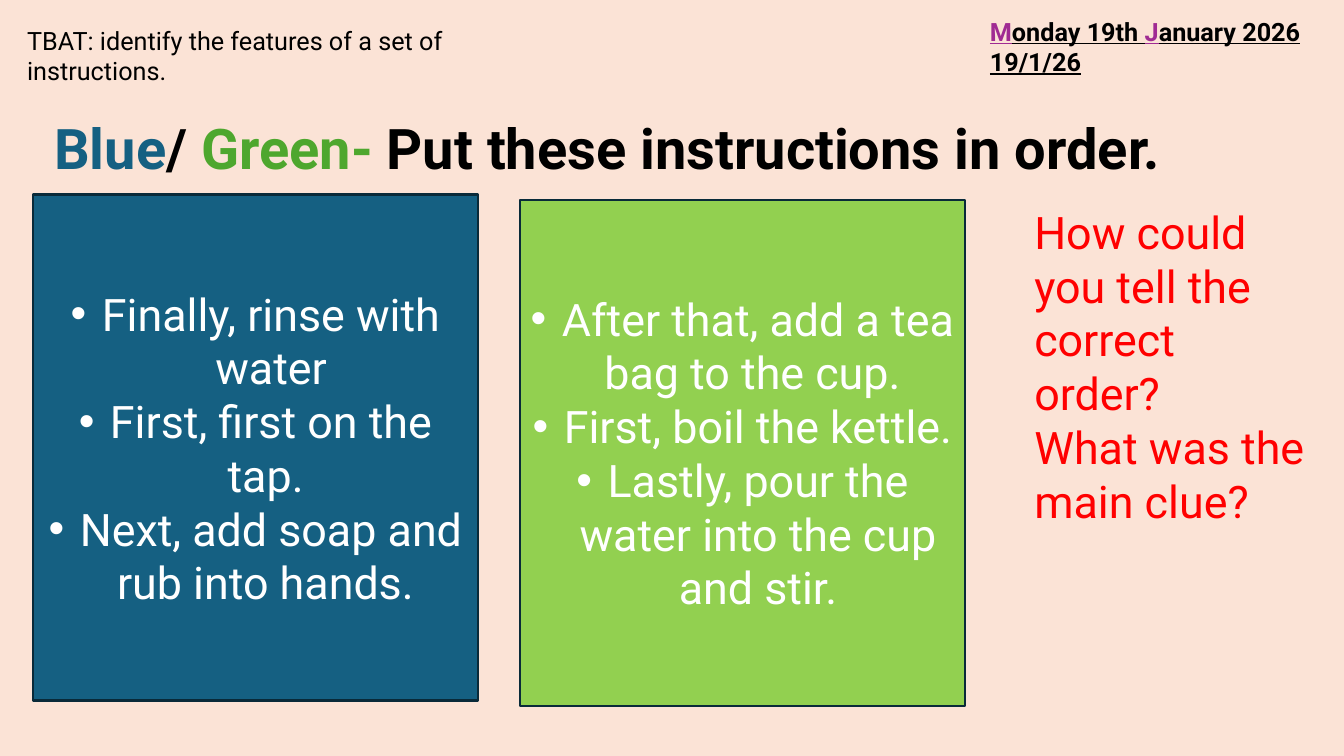
from lxml import etree
from pptx import Presentation
from pptx.dml.color import RGBColor
from pptx.enum import shapes, text
from pptx.oxml import ns
from pptx.util import Inches, Pt

PEACH = RGBColor(0xFB, 0xE3, 0xD6)
BLACK = RGBColor(0x00, 0x00, 0x00)
WHITE = RGBColor(0xFF, 0xFF, 0xFF)
PURPLE = RGBColor(0xA0, 0x2B, 0x93)
BLUE = RGBColor(0x15, 0x60, 0x82)
GREEN = RGBColor(0x4E, 0xA7, 0x2E)
LIME = RGBColor(0x92, 0xD0, 0x50)
RED = RGBColor(0xFF, 0x00, 0x00)
OUTLINE = RGBColor(0x09, 0x2A, 0x39)


class InstructionSlide:
    font_name = "Roboto"
    bullet_indent = Inches(0.31)

    def __init__(self, presentation):
        self.slide = presentation.slides.add_slide(presentation.slide_layouts[6])
        background = self.slide.background.fill
        background.solid()
        background.fore_color.rgb = PEACH

    def bullet(self, paragraph):
        properties = paragraph._p.get_or_add_pPr()
        properties.set("marL", str(self.bullet_indent))
        properties.set("indent", str(-self.bullet_indent))
        etree.SubElement(properties, ns.qn("a:buFont"), typeface="Arial")
        etree.SubElement(properties, ns.qn("a:buChar"), char="•")

    def add_lines(self, frame, lines, size, bold=None, underline=None, bulleted=False):
        frame.word_wrap = True
        for number, line in enumerate(lines):
            paragraph = frame.add_paragraph() if number else frame.paragraphs[0]
            if bulleted:
                paragraph.alignment = text.PP_ALIGN.CENTER
                self.bullet(paragraph)
            paragraph.font.name = self.font_name
            paragraph.font.size = Pt(size)
            paragraph.font.bold = bold
            paragraph.font.underline = underline
            for words, color in line:
                run = paragraph.add_run()
                run.text = words
                run.font.color.rgb = color

    def text_box(self, left, top, width, height, lines, size, **emphasis):
        box = self.slide.shapes.add_textbox(
            Inches(left), Inches(top), Inches(width), Inches(height))
        self.add_lines(box.text_frame, lines, size, **emphasis)

    def task_card(self, left, top, fill, steps):
        card = self.slide.shapes.add_shape(
            shapes.MSO_SHAPE.RECTANGLE,
            Inches(left), Inches(top), Inches(4.41), Inches(5.02))
        card.shadow.inherit = False
        card.fill.solid()
        card.fill.fore_color.rgb = fill
        card.line.color.rgb = OUTLINE
        card.line.width = Pt(1.5)
        card.text_frame.vertical_anchor = text.MSO_ANCHOR.MIDDLE
        lines = [[(step, WHITE)] for step in steps]
        self.add_lines(card.text_frame, lines, 32, bulleted=True)


def main():
    presentation = Presentation()
    presentation.slide_width = Inches(13.33)
    presentation.slide_height = Inches(7.5)
    lesson = InstructionSlide(presentation)

    date = [
        [("M", PURPLE), ("onday 19th ", BLACK), ("J", PURPLE), ("anuary 2026", BLACK)],
        [("19/1/26", BLACK)],
    ]
    objective = [[("TBAT: identify the features of a set of instructions.", BLACK)]]
    heading = [[
        ("Blue", BLUE), ("/ ", BLACK), ("Green- ", GREEN),
        ("Put these instructions in order.", BLACK),
    ]]
    questions = [
        [("How could you tell the correct order? ", RED)],
        [("What was the main clue? ", RED)],
    ]

    lesson.text_box(9.72, 0.11, 3.87, 0.71, date, 18, bold=True, underline=True)
    lesson.text_box(0.17, 0.2, 5.69, 0.4, objective, 18)
    lesson.text_box(0.44, 1.08, 13.07, 0.8, heading, 40, bold=True)
    lesson.task_card(0.33, 1.93, BLUE, [
        "Finally, rinse with water",
        "First, first on the tap. ",
        "Next, add soap and rub into hands. ",
    ])
    lesson.task_card(5.16, 1.98, LIME, [
        "After that, add a tea bag to the cup. ",
        "First, boil the kettle. ",
        "Lastly, pour the water into the cup and stir.",
    ])
    lesson.text_box(10.16, 1.98, 2.9, 2.79, questions, 32)

    presentation.save("out.pptx")


if __name__ == "__main__":
    main()
